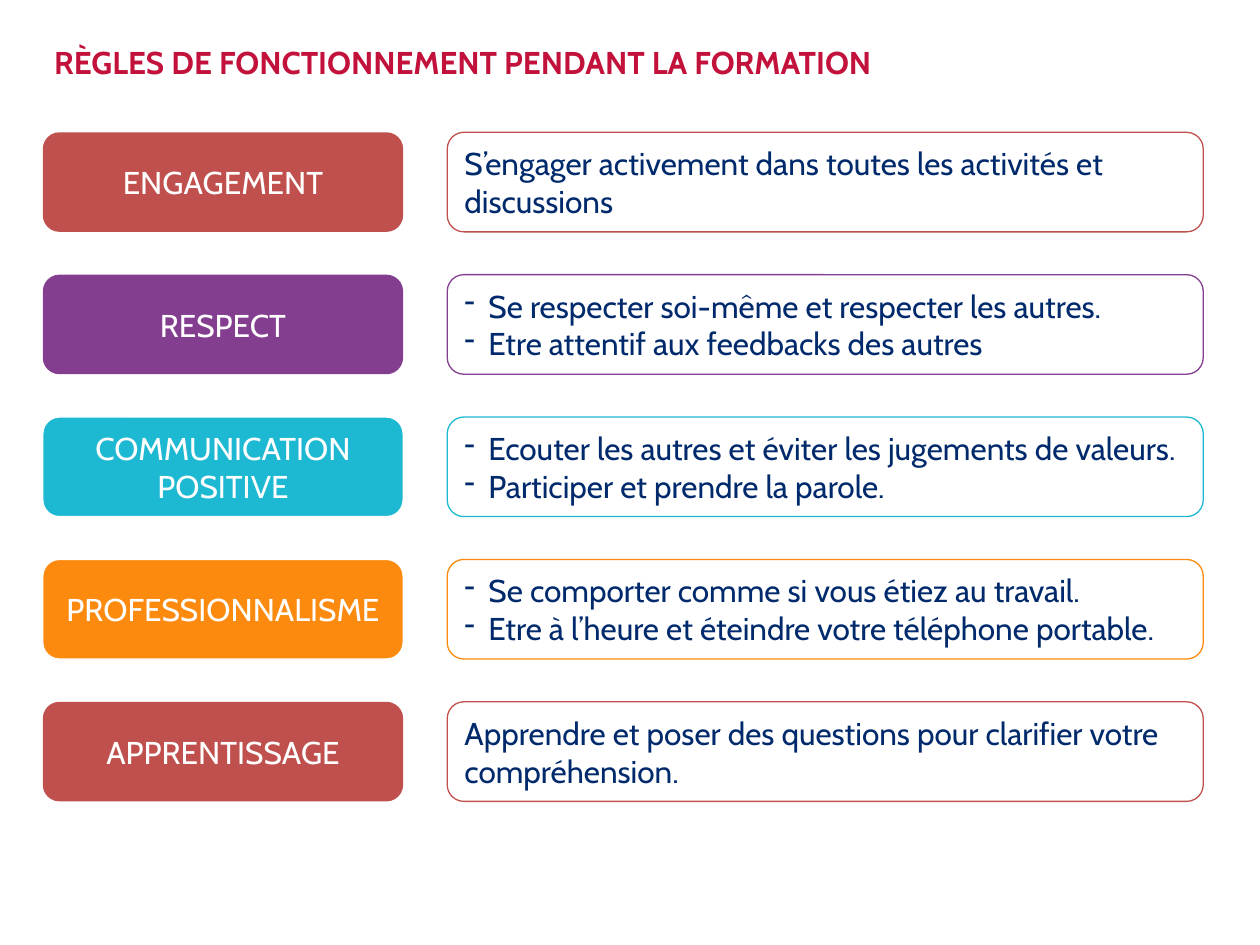
from pptx import Presentation
from pptx.dml.color import RGBColor
from pptx.enum.shapes import MSO_SHAPE
from pptx.enum.text import MSO_ANCHOR, MSO_AUTO_SIZE, PP_ALIGN
from pptx.oxml.ns import qn
from pptx.util import Inches, Pt
from lxml import etree

ROUNDED = MSO_SHAPE.ROUNDED_RECTANGLE
LEFT, CENTER = PP_ALIGN.LEFT, PP_ALIGN.CENTER
TOP, MIDDLE = MSO_ANCHOR.TOP, MSO_ANCHOR.MIDDLE

COLORS = {
    "title": "C2113A", "text": "002A6C", "white": "FFFFFF", "red": "C0504D",
    "purple": "833E90", "cyan": "1DB8D1", "orange": "FC8A0E",
}
# Rule name, colour, edge of the name box, description lines
RULES = [
    ("ENGAGEMENT", "red", None,
     ["S’engager activement dans toutes les activités et discussions"]),
    ("RESPECT", "purple", None,
     ["Se respecter soi-même et respecter les autres.",
      "Etre attentif aux feedbacks des autres"]),
    ("COMMUNICATION POSITIVE", "cyan", "white",
     ["Ecouter les autres et éviter les jugements de valeurs.",
      "Participer et prendre la parole."]),
    ("PROFESSIONNALISME", "orange", "white",
     ["Se comporter comme si vous étiez au travail.",
      "Etre à l’heure et éteindre votre téléphone portable."]),
    ("APPRENTISSAGE", "red", None,
     ["Apprendre et poser des questions pour clarifier votre compréhension."]),
]
NAME_X, NAME_W = 0.34, 2.86
DESC_X, DESC_W = 3.55, 6
FIRST_Y, PITCH, BOX_H = 1.05, 1.13, 0.79
INDENT = Inches(0.19)


def rgb(name):
    return RGBColor.from_string(COLORS[name])


def write(shape, lines, color="text", align=LEFT, anchor=MIDDLE, bold=False):
    """Fill a shape with paragraphs; several lines become a dashed list."""
    tf = shape.text_frame
    tf.word_wrap = True
    tf.auto_size = MSO_AUTO_SIZE.NONE
    tf.vertical_anchor = anchor
    for i, line in enumerate(lines):
        p = tf.paragraphs[0] if i == 0 else tf.add_paragraph()
        p.alignment = align
        if len(lines) > 1:
            pPr = p._p.get_or_add_pPr()
            pPr.set("marL", str(INDENT))
            pPr.set("indent", str(-INDENT))
            etree.SubElement(pPr, qn("a:buChar")).set("char", "-")
        r = p.add_run()
        r.text = line
        r.font.name, r.font.size, r.font.bold = "Cabin", Pt(18), bold
        r.font.color.rgb = rgb(color)


prs = Presentation()
prs.slide_width, prs.slide_height = Inches(10), Inches(7.5)
s = prs.slides.add_slide(prs.slide_layouts[5])

title = s.shapes.title
title.left, title.top = Inches(0.33), Inches(0.29)
title.width, title.height = Inches(9.33), Inches(0.76)
write(title, ["RÈGLES DE FONCTIONNEMENT PENDANT LA FORMATION"],
      color="title", anchor=TOP, bold=True)

for row, (name, color, edge, lines) in enumerate(RULES):
    y = FIRST_Y + row * PITCH
    for x, w, fill, line, texts, style in (
        (NAME_X, NAME_W, color, edge, [name], {"color": "white", "align": CENTER}),
        (DESC_X, DESC_W, None, color, lines, {}),
    ):
        sp = s.shapes.add_shape(ROUNDED, Inches(x), Inches(y), Inches(w), Inches(BOX_H))
        sp.shadow.inherit = False
        if fill:
            sp.fill.solid()
            sp.fill.fore_color.rgb = rgb(fill)
        else:
            sp.fill.background()
        if line:
            sp.line.color.rgb = rgb(line)
            sp.line.width = Pt(0.75)
        else:
            sp.line.fill.background()
        write(sp, texts, **style)

prs.save("out.pptx")
